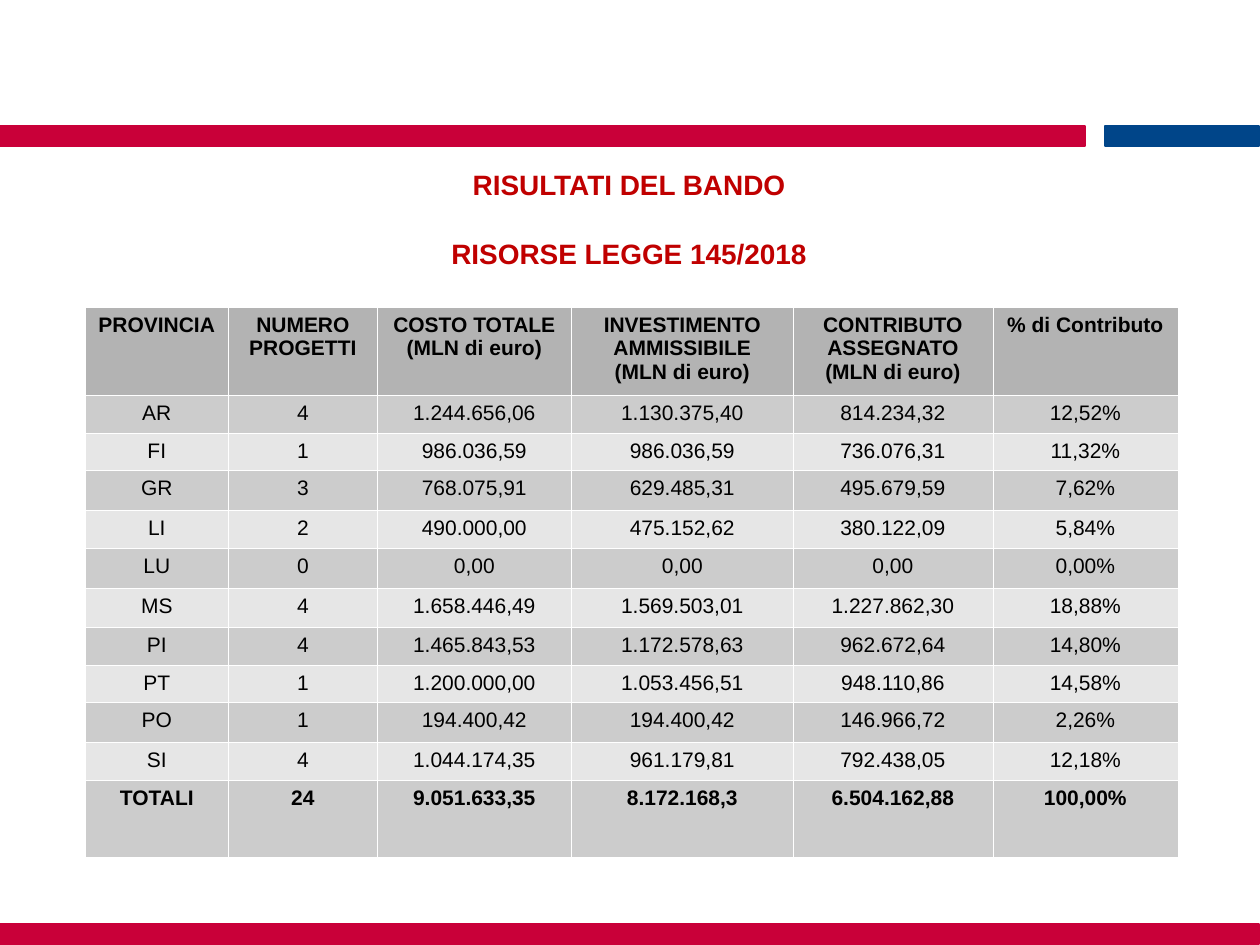
from lxml.etree import SubElement
from pptx import Presentation
from pptx.dml.color import RGBColor
from pptx.enum.shapes import MSO_SHAPE
from pptx.enum.text import MSO_ANCHOR, MSO_AUTO_SIZE, PP_ALIGN
from pptx.oxml.ns import qn
from pptx.util import Pt

COLORS = {
    "red": "C90039",
    "blue": "004589",
    "title": "C00000",
    "text": "000000",
    "edge": "FFFFFF",
    "head": "B3B3B3",
    "dark": "CCCCCC",
    "light": "E6E6E6",
}
FONT = "Arial"
WIDTHS = [82, 85, 111, 126.7, 114, 106]
HEIGHTS = [50.4, 21.7, 21.2, 22.8, 21.7, 23.4, 22.3, 21.2, 21.6, 22.8, 21.7, 44]
ROWS = [
    ["PROVINCIA", "NUMERO PROGETTI", "COSTO TOTALE\n(MLN di euro)",
     "INVESTIMENTO AMMISSIBILE\n(MLN di euro)",
     "CONTRIBUTO ASSEGNATO\n(MLN di euro)", "% di Contributo"],
    ["AR", "4", "1.244.656,06", "1.130.375,40", "814.234,32", "12,52%"],
    ["FI", "1", "986.036,59", "986.036,59", "736.076,31", "11,32%"],
    ["GR", "3", "768.075,91", "629.485,31", "495.679,59", "7,62%"],
    ["LI", "2", "490.000,00", "475.152,62", "380.122,09", "5,84%"],
    ["LU", "0", "0,00", "0,00", "0,00", "0,00%"],
    ["MS", "4", "1.658.446,49", "1.569.503,01", "1.227.862,30", "18,88%"],
    ["PI", "4", "1.465.843,53", "1.172.578,63", "962.672,64", "14,80%"],
    ["PT", "1", "1.200.000,00", "1.053.456,51", "948.110,86", "14,58%"],
    ["PO", "1", "194.400,42", "194.400,42", "146.966,72", "2,26%"],
    ["SI", "4", "1.044.174,35", "961.179,81", "792.438,05", "12,18%"],
    ["TOTALI", "24", "9.051.633,35", "8.172.168,3", "6.504.162,88", "100,00%"],
]


def color(name):
    return RGBColor.from_string(COLORS[name])


def style(frame, size, bold, tint):
    for para in frame.paragraphs:
        para.alignment = PP_ALIGN.CENTER
        for run in para.runs:
            run.font.name = FONT
            run.font.size = Pt(size)
            run.font.bold = bold
            run.font.color.rgb = color(tint)


def add_bar(slide, left, top, width, height, tint):
    bar = slide.shapes.add_shape(
        MSO_SHAPE.RECTANGLE, Pt(left), Pt(top), Pt(width), Pt(height))
    bar.shadow.inherit = False
    bar.fill.solid()
    bar.fill.fore_color.rgb = color(tint)
    bar.line.color.rgb = color(tint)
    bar.line.width = Pt(1)


def add_bars(slide, left, top, width, height):
    thick, split, gap = 11.6, 620, 11.5
    start = split + gap
    add_bar(slide, left, top, split, thick, "red")
    add_bar(slide, left, top + height - thick, width, thick, "red")
    add_bar(slide, left + start, top, width - start, thick, "blue")


def add_title(slide, left, top, width, height):
    title = slide.shapes.title
    title.left, title.top = Pt(left), Pt(top)
    title.width, title.height = Pt(width), Pt(height)
    frame = title.text_frame
    frame.text = "RISULTATI DEL BANDO\nRISORSE LEGGE 145/2018"
    frame.word_wrap = True
    frame.auto_size = MSO_AUTO_SIZE.NONE
    frame.vertical_anchor = MSO_ANCHOR.TOP
    style(frame, 16, True, "title")
    frame.paragraphs[1].space_before = Pt(20)


def add_edges(cell):
    props = cell._tc.get_or_add_tcPr()
    for side in ("lnL", "lnR", "lnT", "lnB"):
        line = SubElement(props, qn(f"a:{side}"), w=str(Pt(0.06)))
        fill = SubElement(line, qn("a:solidFill"))
        SubElement(fill, qn("a:srgbClr"), val=COLORS["edge"])


def add_grid(slide, left, top, width, height):
    grid = slide.shapes.add_table(
        len(ROWS), len(WIDTHS), Pt(left), Pt(top), Pt(width), Pt(height)).table
    for col, size in zip(grid.columns, WIDTHS):
        col.width = Pt(size)
    last = len(ROWS) - 1
    for i, values in enumerate(ROWS):
        grid.rows[i].height = Pt(HEIGHTS[i])
        tint = "head" if i == 0 else "dark" if i % 2 else "light"
        for j, value in enumerate(values):
            cell = grid.cell(i, j)
            cell.text_frame.text = value
            style(cell.text_frame, 12, i in (0, last), "text")
            add_edges(cell)
            cell.fill.solid()
            cell.fill.fore_color.rgb = color(tint)


def main():
    deck = Presentation()
    deck.slide_width, deck.slide_height = Pt(720), Pt(540)
    slide = deck.slides.add_slide(deck.slide_layouts[5])
    add_bars(slide, 0, 72, 719.5, 467.5)
    add_title(slide, 25, 92.2, 669, 65)
    add_grid(slide, 48.6, 175.2, sum(WIDTHS), sum(HEIGHTS))
    deck.save("out.pptx")


if __name__ == "__main__":
    main()
